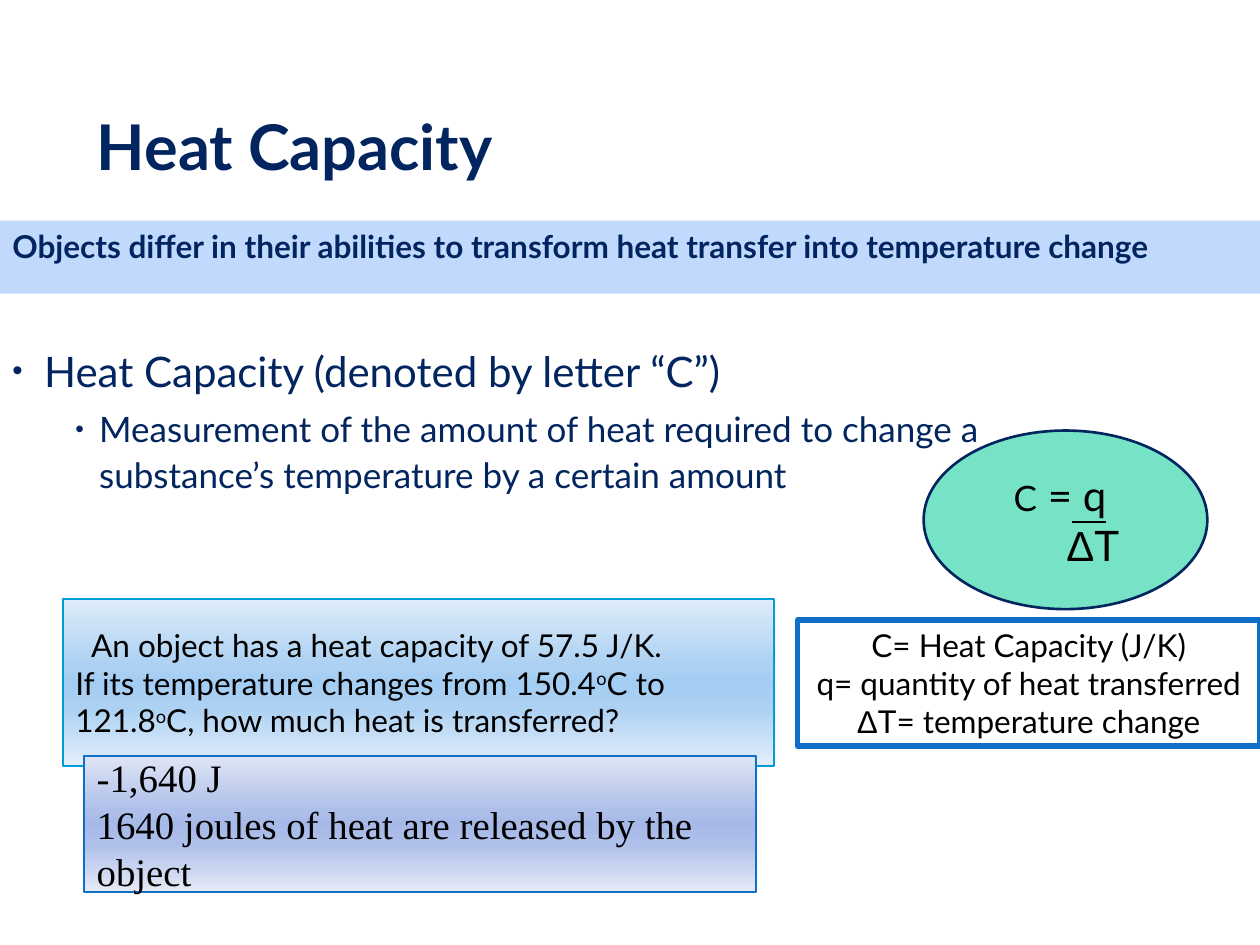
from dataclasses import dataclass
from lxml import etree
from pptx import Presentation
from pptx import util as u
from pptx.dml.color import RGBColor
from pptx.enum import shapes, text
from pptx.oxml import ns

Cm, Pt = u.Cm, u.Pt
LEFT, MID = text.PP_ALIGN.LEFT, text.PP_ALIGN.CENTER
RECT, OVAL = shapes.MSO_SHAPE.RECTANGLE, shapes.MSO_SHAPE.OVAL


@dataclass(frozen=True)
class Theme:
    navy: str = "02255F"
    black: str = "000000"
    white: str = "FFFFFF"
    band: str = "C2D9FE"
    mint: str = "10CF9B"
    blue: str = "0F6FC6"
    cyan: str = "009DD9"
    sky: tuple = ("DEEBF9", "ACD1F3", "A4CDF3", "ACD1F3", "E5EFFA")
    haze: tuple = ("DFE5F5", "AEBFE9", "A6B9E7", "AEBFE9", "E6EAF7")
    stops: tuple = (0, 40, 50, 65, 100)
    sans: str = "Lato"
    greek: str = "Arial"
    serif: str = "Times New Roman"
    title: float = 36
    large: float = 24
    answer: float = 22.2
    mid: float = 20
    small: float = 18


T = Theme()


def rgb(code):
    return RGBColor.from_string(code)


def sub(node, tag, **attrs):
    return etree.SubElement(node, ns.qn(tag), attrs)


def style(font, size, color, face=T.sans, bold=False):
    font.size, font.name, font.bold = Pt(size), face, bold
    font.color.rgb = rgb(color)


def write(frame, lines, size, color=T.black, face=T.sans, bold=False,
          align=LEFT, anchor=text.MSO_ANCHOR.MIDDLE):
    frame.word_wrap = True
    frame.auto_size = text.MSO_AUTO_SIZE.NONE
    frame.vertical_anchor = anchor
    for i, line in enumerate(lines):
        para = frame.add_paragraph() if i else frame.paragraphs[0]
        para.alignment = align
        style(para.font, size, color, face, bold)
        for part in [line] if isinstance(line, str) else line:
            words, look = (part, {}) if isinstance(part, str) else part
            run = para.add_run()
            run.text = words
            for key, value in look.items():
                if key == "raised":
                    run._r.get_or_add_rPr().set("baseline", "30000")
                else:
                    setattr(run.font, key, value)
    return frame.paragraphs


def indent(para, left, first=0):
    props = para._p.get_or_add_pPr()
    props.set("marL", str(Cm(left)))
    props.set("indent", str(Cm(first)))
    return props


def bullet(para, left, hang):
    props = indent(para, left, -hang)
    sub(sub(props, "a:buClr"), "a:srgbClr", val=T.navy)
    sub(props, "a:buSzPct", val="70000")
    sub(props, "a:buFont", typeface="Arial")
    sub(props, "a:buChar", char="•")


def blend(fill, colors):
    fill.gradient()
    fill.gradient_angle = 270
    stops = fill._xPr.find(ns.qn("a:gradFill")).find(ns.qn("a:gsLst"))
    for old in list(stops):
        stops.remove(old)
    for spot, code in zip(T.stops, colors):
        sub(sub(stops, "a:gs", pos=str(spot * 1000)), "a:srgbClr", val=code)


def panel(slide, kind, at, fill, line=None, width=0, alpha=None):
    shape = slide.shapes.add_shape(kind, *map(Cm, at))
    shape.shadow.inherit = False
    if isinstance(fill, tuple):
        blend(shape.fill, fill)
    else:
        shape.fill.solid()
        shape.fill.fore_color.rgb = rgb(fill)
    if alpha:
        color = shape.fill._xPr.find(ns.qn("a:solidFill"))[0]
        sub(color, "a:alpha", val=str(alpha * 1000))
    if line:
        shape.line.color.rgb = rgb(line)
        shape.line.width = Pt(width)
    else:
        shape.line.fill.background()
    return shape.text_frame


def head(slide, words):
    title = slide.shapes.title
    title.left, title.top, title.width, title.height = map(
        Cm, (1.7, 2.03, 22.86, 1.78))
    write(title.text_frame, [words], T.title, T.navy, bold=True)


def points(slide, at, items):
    frame = slide.shapes.add_textbox(*map(Cm, at)).text_frame
    paras = write(frame, [item[0] for item in items], T.large, T.navy,
                  anchor=text.MSO_ANCHOR.TOP)
    for i, (para, (_, size, left, hang)) in enumerate(zip(paras, items)):
        bullet(para, left, hang)
        para.font.size = Pt(size)
        para.line_spacing = Pt(26)
        para.space_before = Pt(5 if i else 0)


def main():
    deck = Presentation()
    deck.slide_width, deck.slide_height = Cm(25.4), Cm(19.05)
    slide = deck.slides.add_slide(deck.slide_layouts[5])
    delta = ("Δ", {"name": T.greek})
    degree = ("o", {"raised": True})

    head(slide, "Heat Capacity")
    points(slide, (0, 6.93, 21.59, 3.53), [
        ("Heat Capacity (denoted by letter “C”)", T.large, 0.64, 0.64),
        ("Measurement of the amount of heat required to change a "
         "substance’s temperature by a certain amount", T.mid, 1.75, 0.48),
    ])

    band = panel(slide, RECT, (0, 4.45, 25.4, 1.47), T.band)
    write(band, ["Objects differ in their abilities to transform heat "
                 "transfer into temperature change"],
          T.small, T.navy, bold=True, anchor=text.MSO_ANCHOR.TOP)

    ratio = panel(slide, OVAL, (18.62, 8.68, 5.72, 3.6), T.mint,
                  T.navy, 1.5, alpha=57)
    lines = write(ratio, [
        [("C", {"size": Pt(T.mid)}), " =", (" q", {"underline": True}), " "],
        [delta, "T"],
    ], T.large, align=MID)
    indent(lines[1], 1.1)

    legend = panel(slide, RECT, (16.08, 12.5, 9.32, 2.54), T.white, T.blue, 3)
    write(legend, ["C= Heat Capacity (J/K)", "q= quantity of heat transferred",
                   [delta, "T= temperature change"]], T.small, align=MID)

    task = panel(slide, RECT, (1.27, 12.07, 14.33, 3.38), T.sky, T.cyan, 0.94)
    lines = write(task, [
        "An object has a heat capacity of 57.5 J/K.",
        ["If its temperature changes from 150.4", degree, "C to 121.8",
         degree, "C, how much heat is transferred?"],
    ], T.small)
    indent(lines[0], 0, 0.32)

    reply = panel(slide, RECT, (1.7, 15.24, 13.54, 2.74), T.haze, T.blue, 0.94)
    write(reply, ["-1,640 J", "1640 joules of heat are released by the object"],
          T.answer, face=T.serif)

    deck.save("out.pptx")


if __name__ == "__main__":
    main()
